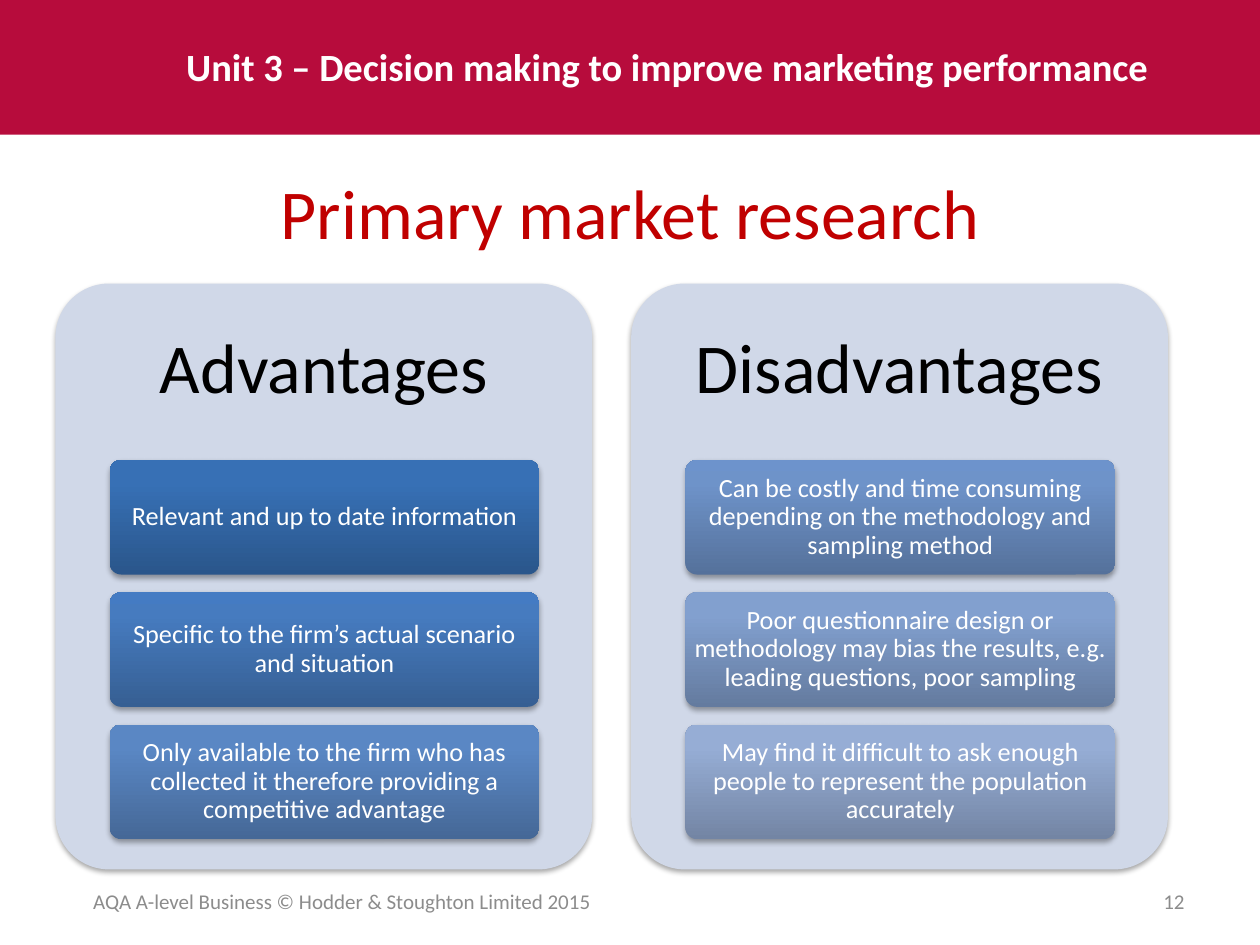
import copy

import pptx
import pptx.dml.color
import pptx.enum.shapes
import pptx.enum.text
import pptx.oxml
import pptx.oxml.ns
import pptx.util

Inches = pptx.util.Inches
ALIGN = pptx.enum.text.PP_ALIGN
ANCHOR = pptx.enum.text.MSO_ANCHOR
SHAPES = pptx.enum.shapes.MSO_SHAPE

COLOURS = {
    "banner": "B70C3C",
    "title": "C00000",
    "panel": "D0D8E8",
    "white": "FFFFFF",
    "black": "000000",
    "footer": "8C8C8C",
}

COLUMNS = [
    ("Advantages", [
        ("Relevant and up to date information",
         ("2A568B", "3770B5", "3570B8")),
        ("Specific to the firm’s actual scenario and situation",
         ("365F93", "467BBF", "447BC3")),
        ("Only available to the firm who has collected it therefore providing a competitive advantage",
         ("456897", "5A87C4", "5887C7")),
    ]),
    ("Disadvantages", [
        ("Can be costly and time consuming depending on the methodology and sampling method",
         ("55719B", "6E93C9", "6D93CC")),
        ("Poor questionnaire design or methodology may bias the results, e.g. leading questions, poor sampling",
         ("647B9F", "82A0CF", "81A0D1")),
        ("May find it difficult to ask enough people to represent the population accurately",
         ("7385A4", "96ADD5", "95ADD7")),
    ]),
]


class SlideBuilder:
    """Holds the shared style and the slide being built."""

    font_name = "Calibri"

    def __init__(self, slide):
        self.slide = slide

    def colour(self, value):
        return pptx.dml.color.RGBColor.from_string(COLOURS.get(value, value))

    def format_text(self, shape, text, size, colour, align=ALIGN.CENTER, bold=False,
                    anchor=ANCHOR.MIDDLE, margins=(0.1, 0.05), line_spacing=None):
        frame = shape.text_frame
        frame.text = text
        frame.word_wrap = True
        frame.auto_size = pptx.enum.text.MSO_AUTO_SIZE.NONE
        frame.vertical_anchor = anchor
        frame.margin_left = frame.margin_right = Inches(margins[0])
        frame.margin_top = frame.margin_bottom = Inches(margins[1])
        paragraph = frame.paragraphs[0]
        paragraph.alignment = align
        paragraph.line_spacing = line_spacing
        font = paragraph.runs[0].font
        font.name = self.font_name
        font.size = pptx.util.Pt(size)
        font.bold = bold
        font.color.rgb = self.colour(colour)

    def title(self, text, box):
        shape = self.slide.shapes.title
        shape.left, shape.top, shape.width, shape.height = map(Inches, box)
        self.format_text(shape, text, 40, "title")

    def text(self, text, box, size, colour, **style):
        shape = self.slide.shapes.add_textbox(*map(Inches, box))
        self.format_text(shape, text, size, colour, **style)

    def block(self, kind, box, fill=None):
        shape = self.slide.shapes.add_shape(kind, *map(Inches, box))
        shape.line.fill.background()
        shape.shadow.inherit = False
        if fill:
            shape.fill.solid()
            shape.fill.fore_color.rgb = self.colour(fill)
        return shape

    def rounded(self, box, fill=None):
        shape = self.block(SHAPES.ROUNDED_RECTANGLE, box, fill)
        shape.adjustments[0] = 0.1
        effects = shape._element.spPr.find(pptx.oxml.ns.qn("a:effectLst"))
        effects.append(pptx.oxml.parse_xml(
            f'<a:outerShdw {pptx.oxml.ns.nsdecls("a")} blurRad="{pptx.util.Pt(3.1)}" '
            f'dist="{pptx.util.Pt(1.8)}" dir="5400000" rotWithShape="0">'
            f'<a:srgbClr val="{COLOURS["black"]}"><a:alpha val="35000"/></a:srgbClr>'
            '</a:outerShdw>'))
        return shape

    def card(self, text, box, gradient):
        shape = self.rounded(box)
        shape.fill.gradient()
        shape.fill.gradient_angle = 90
        stop_list = shape._element.spPr.find(".//" + pptx.oxml.ns.qn("a:gsLst"))
        stop_list.append(copy.deepcopy(stop_list[-1]))
        for stop, position, colour in zip(shape.fill.gradient_stops, (0, 0.8, 1), gradient):
            stop.position = position
            stop.color.rgb = self.colour(colour)
        self.format_text(shape, text, 15, "white", margins=(0.04, 0.03), line_spacing=0.9)

    def column(self, heading, cards, left):
        top, width = 2.25, 4.26
        self.rounded((left, top, width, 4.65), "panel")
        self.text(heading, (left, top, width, 1.39), 40, "black",
                  margins=(0.17, 0.17), line_spacing=0.9)
        for row, (text, gradient) in enumerate(cards):
            self.card(text, (left + 0.43, 3.65 + row * 1.05, 3.41, 0.91), gradient)


def main():
    presentation = pptx.Presentation()
    presentation.slide_width = Inches(10)
    presentation.slide_height = Inches(7.5)
    builder = SlideBuilder(presentation.slides.add_slide(presentation.slide_layouts[5]))

    builder.block(SHAPES.RECTANGLE, (0, 0, 10, 1.07), "banner")
    builder.text("Unit 3 – Decision making to improve marketing performance",
                 (1.38, 0.29, 8.03, 0.47), 22, "white",
                 align=ALIGN.LEFT, bold=True, anchor=ANCHOR.TOP)
    builder.title("Primary market research", (0.51, 1.15, 8.98, 1.06))

    for index, (heading, cards) in enumerate(COLUMNS):
        builder.column(heading, cards, 0.44 + index * 4.57)

    builder.text("AQA A-level Business © Hodder & Stoughton Limited 2015",
                 (0.51, 6.95, 4.41, 0.4), 12, "footer")
    builder.text("12", (7.17, 6.95, 2.33, 0.4), 12, "footer", align=ALIGN.RIGHT)

    presentation.save("out.pptx")


if __name__ == "__main__":
    main()
